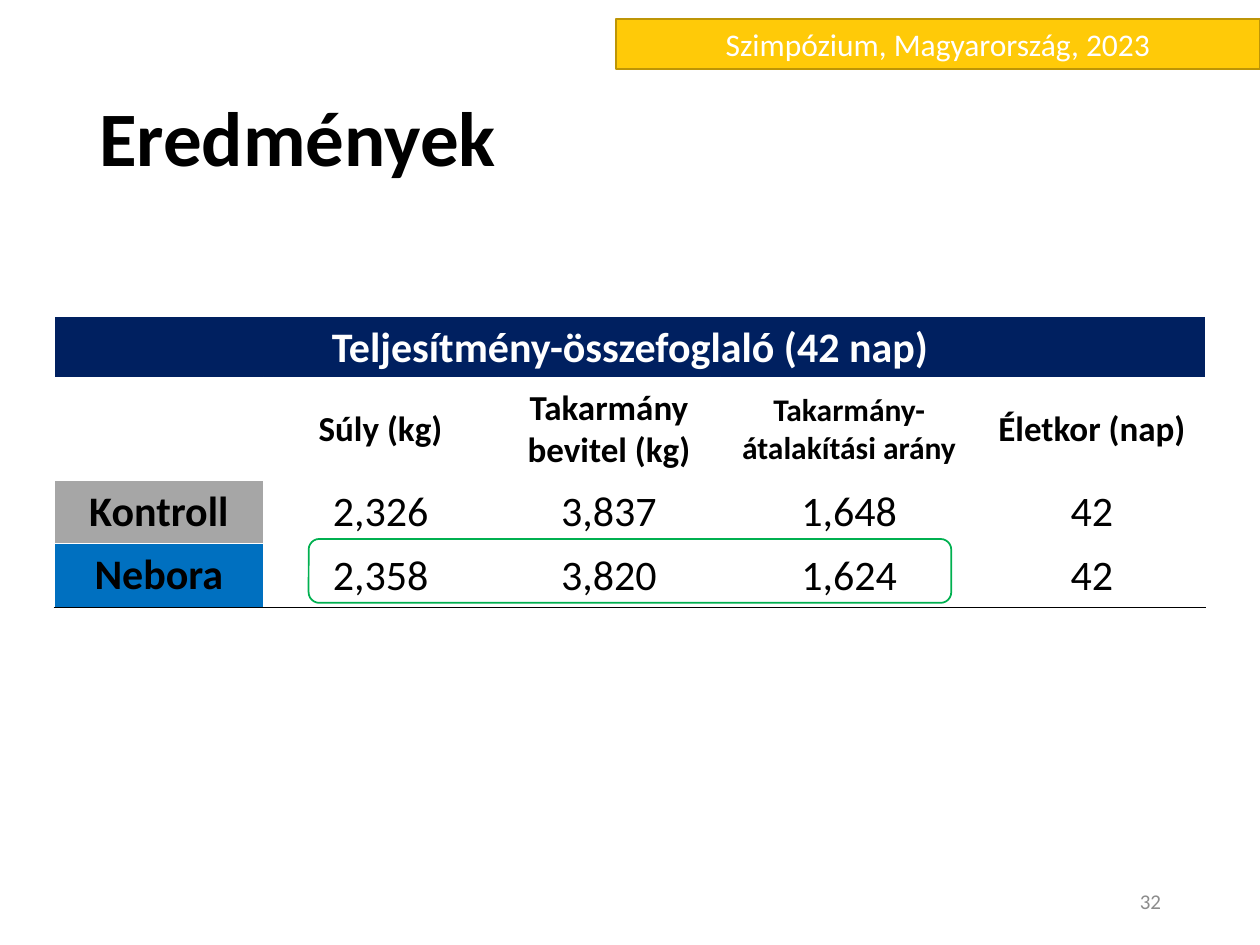
from typing import NamedTuple

from lxml import etree
from pptx import Presentation
from pptx.dml import color
from pptx.enum import shapes, text
from pptx.oxml import ns
from pptx.util import Pt

FONT = "Calibri"
MID = text.MSO_ANCHOR.MIDDLE
MID_X = text.PP_ALIGN.CENTER


class Box(NamedTuple):
    left: float
    top: float
    width: float
    height: float

    def pts(self) -> list:
        return [Pt(v) for v in self]


class Entry(NamedTuple):
    words: str
    size: float = 24
    bold: bool = False
    ink: str = "000000"
    fill: str = "FFFFFF"
    data: bool = False


def rgb(code: str) -> color.RGBColor:
    return color.RGBColor.from_string(code)


def write(frame, words: str, size: float, ink: str, align, bold=False) -> None:
    par = frame.paragraphs[0]
    par.alignment = align
    run = par.add_run()
    run.text = words
    look = {"name": FONT, "size": Pt(size), "bold": bold}
    for key, val in look.items():
        setattr(run.font, key, val)
    run.font.color.rgb = rgb(ink)


def draw(slide, kind, box: Box, line: str, fill: str = ""):
    shape = slide.shapes.add_shape(kind, *box.pts())
    shape.shadow.inherit = False
    if fill:
        shape.fill.solid()
        shape.fill.fore_color.rgb = rgb(fill)
    else:
        shape.fill.background()
    shape.line.color.rgb = rgb(line)
    shape.line.width = Pt(1)
    return shape


def edge(cell, sides: dict) -> None:
    """Set cell borders; sides run in the order L, R, T, B."""
    props = cell._tc.get_or_add_tcPr()
    for spot, (side, (ink, width)) in enumerate(sides.items()):
        line = etree.Element(ns.qn(f"a:ln{side}"), w=str(Pt(width)))
        solid = etree.SubElement(line, ns.qn("a:solidFill"))
        etree.SubElement(solid, ns.qn("a:srgbClr"), val=ink)
        props.insert(spot, line)


def fill_cell(cell, entry: Entry) -> None:
    cell.fill.solid()
    cell.fill.fore_color.rgb = rgb(entry.fill)
    cell.vertical_anchor = MID
    if entry.data:
        for side in ("left", "right", "top"):
            setattr(cell, f"margin_{side}", Pt(0.75))
        cell.margin_bottom = Pt(0)
    if entry.words:
        write(cell.text_frame, entry.words, entry.size, entry.ink, MID_X, entry.bold)


def add_grid(slide, box: Box, cols: list, highs: list, rows: list) -> None:
    grid = slide.shapes.add_table(len(rows), len(cols), *box.pts()).table
    grid.first_row = grid.horz_banding = False
    for col, width in zip(grid.columns, cols):
        col.width = Pt(width)
    for row, high in zip(grid.rows, highs):
        row.height = Pt(high)
    grid.cell(0, 0).merge(grid.cell(0, len(cols) - 1))
    thin, thick, dark = ("FFFFFF", 1), ("FFFFFF", 3), ("000000", 1)
    last = len(rows) - 1
    for r, row in enumerate(rows):
        for c in range(len(cols)):
            cell = grid.cell(r, c)
            if c < len(row):
                fill_cell(cell, row[c])
            edge(cell, {"L": thin, "R": thin,
                        "T": thick if r == 1 else thin,
                        "B": {0: thick, last: dark}.get(r, thin)})


def data_row(name: str, fill: str, vals: list) -> list:
    return [Entry(name, bold=True, fill=fill)] + [Entry(v, data=True) for v in vals]


def main() -> None:
    deck = Presentation()
    deck.slide_width, deck.slide_height = Pt(720), Pt(540)
    slide = deck.slides.add_slide(deck.slide_layouts[5])

    # Event banner
    banner = draw(slide, shapes.MSO_SHAPE.RECTANGLE,
                  Box(352, 10.8, 368, 28.8), "BD9506", "FFCA08")
    banner.text_frame.vertical_anchor = MID
    write(banner.text_frame, "Szimpózium, Magyarország, 2023", 18, "FFFFFF", MID_X)

    # Title
    title = slide.shapes.title
    sides = ("left", "top", "width", "height")
    for side, val in zip(sides, Box(49.5, 28.8, 621, 104.4).pts()):
        setattr(title, side, val)
    title.text_frame.vertical_anchor = MID
    write(title.text_frame, "Eredmények", 44, "000000", text.PP_ALIGN.LEFT, True)
    title.text_frame.paragraphs[0].line_spacing = 0.9

    # Slide number
    num = slide.shapes.add_textbox(*Box(508.5, 500.5, 162, 28.8).pts())
    num.text_frame.word_wrap = True
    num.text_frame.vertical_anchor = MID
    write(num.text_frame, "32", 12, "8C8C8C", text.PP_ALIGN.RIGHT)

    # Results table
    heads = [("", 20), ("Súly (kg)", 20), ("Takarmány bevitel (kg)", 20),
             ("Takarmány-átalakítási arány", 18), ("Életkor (nap)", 20)]
    rows = [
        [Entry("Teljesítmény-összefoglaló (42 nap)", 24, True, "FFFFFF", "002060")],
        [Entry(words, size, True) for words, size in heads],
        data_row("Kontroll", "A6A6A6", ["2,326", "3,837", "1,648", "42"]),
        data_row("Nebora", "0070C0", ["2,358", "3,820", "1,624", "42"]),
    ]
    add_grid(slide, Box(31, 180.7, 658, 166), [119.5, 134, 127, 147.5, 130],
             [35.5, 57.5, 36.5, 36.5], rows)

    # Frame around the improved values
    draw(slide, shapes.MSO_SHAPE.ROUNDED_RECTANGLE,
         Box(176.4, 308, 367.2, 36.5), "00B050")

    deck.save("out.pptx")


if __name__ == "__main__":
    main()
